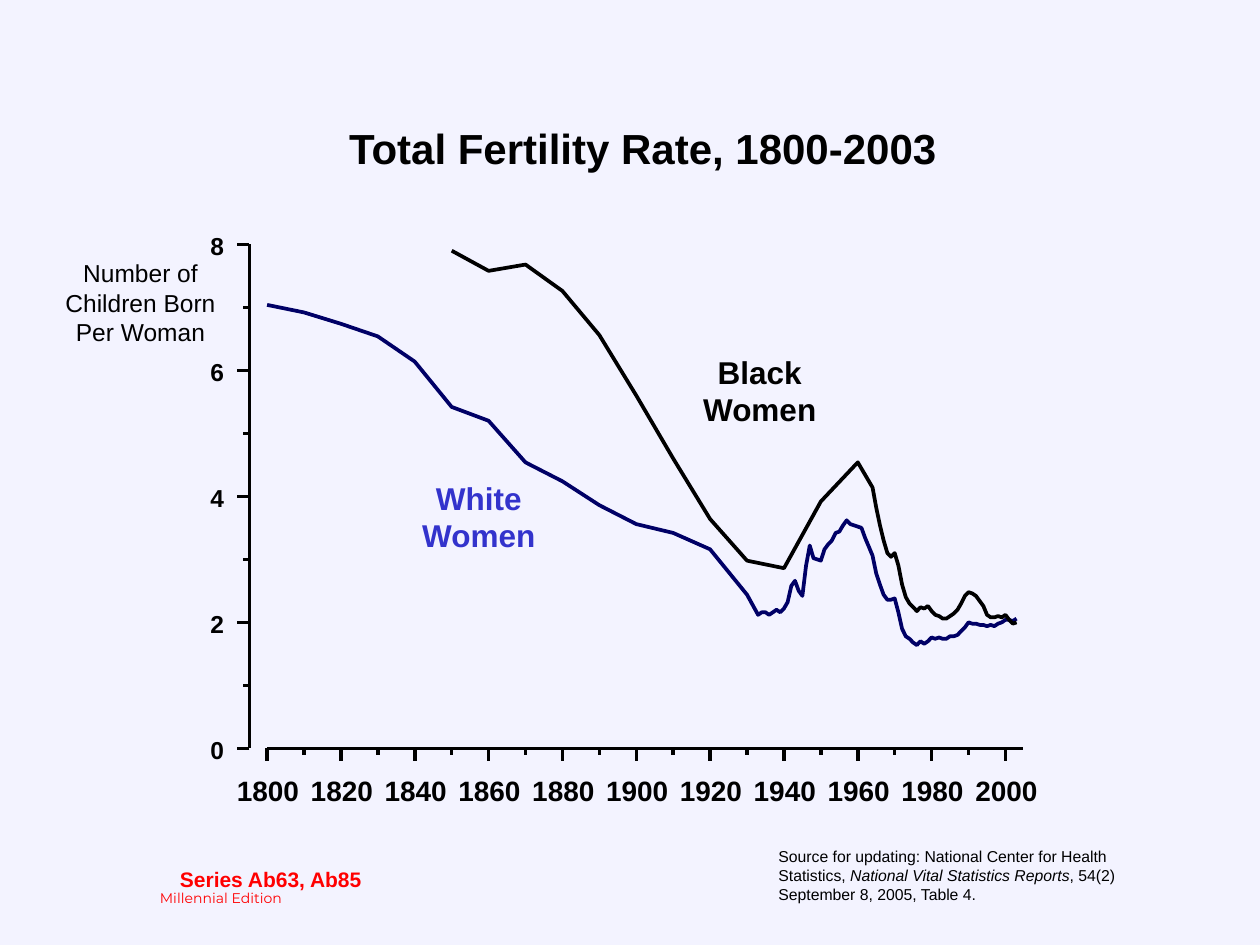
"""Build a slide charting the total fertility rate of white and black women, 1800-2003."""
from dataclasses import dataclass

from lxml import etree
from pptx import Presentation
from pptx.dml.color import RGBColor
from pptx.enum import shapes, text
from pptx.oxml import ns
from pptx.util import Inches, Pt


@dataclass(frozen=True)
class Theme:
    font: str = "Arial"
    footer_font: str = "Montserrat"
    background: str = "F3F3FF"
    ink: str = "000000"
    white_line: str = "000066"
    white_label: str = "3333CC"
    accent: str = "FF0000"
    title: int = 24
    series: int = 18
    year: int = 16
    rate: int = 14
    reference: int = 12
    source: int = 9
    footer: int = 8
    hairline: float = 0
    tick: float = 1.5
    curve: float = 2.13


theme = Theme()
LEFT, BASE, YEAR_WIDTH, RATE_HEIGHT = 2.12, 5.94, 0.0293, 0.5
AXIS_X, AXIS_END = 1.98, 8.12
MAJOR_TICK, MINOR_TICK = 0.1, 0.05

white_decades = [7.04, 6.92, 6.74, 6.54, 6.14, 5.42, 5.2, 4.54, 4.24, 3.86, 3.56, 3.42, 3.16, 2.44]
white_years = [
    2.12, 2.16, 2.16, 2.12, 2.16, 2.2, 2.16,
    2.22, 2.32, 2.58, 2.66, 2.5, 2.42, 2.9, 3.22, 3.02, 3.0,
    2.98, 3.16, 3.24, 3.3, 3.42, 3.44, 3.54, 3.62, 3.56, 3.54,
    3.52, 3.5, 3.34, 3.2, 3.06, 2.78, 2.6, 2.44, 2.36, 2.36,
    2.38, 2.16, 1.9, 1.78, 1.74, 1.68, 1.64, 1.7, 1.66, 1.7,
    1.76, 1.74, 1.76, 1.74, 1.74, 1.78, 1.78, 1.8, 1.86, 1.92,
    2.0, 1.98, 1.98, 1.96, 1.96, 1.94, 1.96, 1.94, 1.98, 2.0,
    2.04, 2.04, 2.02, 2.06,
]
black_decades = [7.9, 7.58, 7.68, 7.26, 6.56, 5.6, 4.6, 3.64, 2.98, 2.86, 3.92, 4.54]
black_years = [
    4.14, 3.82, 3.54, 3.3, 3.1, 3.04,
    3.1, 2.9, 2.6, 2.4, 2.3, 2.24, 2.18, 2.24, 2.22, 2.26,
    2.18, 2.12, 2.1, 2.06, 2.06, 2.1, 2.14, 2.2, 2.3, 2.42,
    2.48, 2.46, 2.42, 2.34, 2.26, 2.12, 2.08, 2.08, 2.1, 2.08,
    2.12, 2.04, 1.98, 2.0,
]

presentation = Presentation()
presentation.slide_width, presentation.slide_height = Inches(10), Inches(7.5)
slide = presentation.slides.add_slide(presentation.slide_layouts[5])
slide.background.fill.solid()
slide.background.fill.fore_color.rgb = RGBColor.from_string(theme.background)


def write(shape, box, paragraphs, size, color=theme.ink, bold=False, font=theme.font,
          align=text.PP_ALIGN.LEFT, wrap=False, inset=None):
    """Place a shape and fill it with uniformly formatted text."""
    shape.left, shape.top, shape.width, shape.height = (Inches(length) for length in box)
    frame = shape.text_frame
    frame.text = paragraphs
    frame.word_wrap = wrap
    frame.auto_size = text.MSO_AUTO_SIZE.NONE
    frame.vertical_anchor = text.MSO_ANCHOR.TOP
    if inset is not None:
        frame.margin_left = frame.margin_right = Inches(inset)
        frame.margin_top = frame.margin_bottom = Inches(inset)
    for paragraph in frame.paragraphs:
        paragraph.alignment = align
        for run in paragraph.runs:
            run.font.name, run.font.size, run.font.bold = font, Pt(size), bold
            run.font.color.rgb = RGBColor.from_string(color)
    return frame


def draw_line(start_x, start_y, end_x, end_y, width=theme.hairline):
    """Draw a straight axis line or tick."""
    line = slide.shapes.add_connector(
        shapes.MSO_CONNECTOR.STRAIGHT,
        Inches(start_x), Inches(start_y), Inches(end_x), Inches(end_y))
    line.line.color.rgb = RGBColor.from_string(theme.ink)
    line.line.width = Pt(width)
    etree.SubElement(line._element.spPr, ns.qn("a:effectLst"))


write(slide.shapes.title, (2.67, 0.92, 4.89, 0.5), "Total Fertility Rate, 1800-2003",
      theme.title, bold=True)

draw_line(LEFT, BASE, AXIS_END, BASE)
for year in range(1800, 2001, 10):
    x = LEFT + (year - 1800) * YEAR_WIDTH
    labelled = year % 20 == 0
    draw_line(x, BASE, x, BASE + (MAJOR_TICK if labelled else MINOR_TICK))
    if labelled:
        write(slide.shapes.add_textbox(0, 0, 0, 0), (x - 0.24, 6.14, 0.49, 0.27), str(year),
              theme.year, bold=True, inset=0)

draw_line(AXIS_X, BASE, AXIS_X, BASE - 8 * RATE_HEIGHT)
for rate in range(9):
    y = BASE - rate * RATE_HEIGHT
    if rate % 2:
        draw_line(AXIS_X, y, AXIS_X - MINOR_TICK, y)
    else:
        draw_line(AXIS_X, y, AXIS_X - MAJOR_TICK, y, theme.tick)
        write(slide.shapes.add_textbox(0, 0, 0, 0), (1.67, y - 0.11, 0.11, 0.23), str(rate),
              theme.rate, bold=True, inset=0)

for first_decade, decades, first_year, years, color in (
    (1800, white_decades, 1933, white_years, theme.white_line),
    (1850, black_decades, 1964, black_years, theme.ink),
):
    rates = [(first_decade + 10 * index, rate) for index, rate in enumerate(decades)]
    rates += enumerate(years, first_year)
    points = [(Inches(LEFT + (year - 1800) * YEAR_WIDTH), Inches(BASE - rate * RATE_HEIGHT))
              for year, rate in rates]
    builder = slide.shapes.build_freeform(*points[0])
    builder.add_line_segments(points[1:], close=False)
    curve = builder.convert_to_shape()
    curve.shadow.inherit = False
    curve.fill.background()
    curve.line.color.rgb = RGBColor.from_string(color)
    curve.line.width = Pt(theme.curve)

for group, left, top, color in (
    ("White", 3.25, 3.75, theme.white_label),
    ("Black", 5.48, 2.75, theme.ink),
):
    write(slide.shapes.add_textbox(0, 0, 0, 0), (left, top, 1.1, 0.7), f"{group}\nWomen",
          theme.series, color, bold=True, align=text.PP_ALIGN.CENTER)

write(slide.shapes.add_textbox(0, 0, 0, 0), (0.42, 2, 1.39, 0.8),
      "Number of\nChildren Born\nPer Woman", theme.rate, align=text.PP_ALIGN.CENTER, wrap=True)
write(slide.shapes.add_textbox(0, 0, 0, 0), (1.33, 6.83, 1.65, 0.3), "Series Ab63, Ab85",
      theme.reference, theme.accent, bold=True)
write(slide.shapes.add_textbox(0, 0, 0, 0), (1.17, 7.01, 1.25, 0.23), "Millennial Edition",
      theme.footer, theme.accent, font=theme.footer_font)

source = write(slide.shapes.add_textbox(0, 0, 0, 0), (6.08, 6.67, 3.33, 0.55),
               "Source for updating: National Center for Health Statistics, ",
               theme.source, wrap=True).paragraphs[0]
for words, italic in (("National Vital Statistics Reports", True),
                      (", 54(2) September 8, 2005, Table 4.", False)):
    run = source.add_run()
    run.text = words
    run.font.name, run.font.size, run.font.italic = theme.font, Pt(theme.source), italic
    run.font.color.rgb = RGBColor.from_string(theme.ink)

presentation.save("out.pptx")
